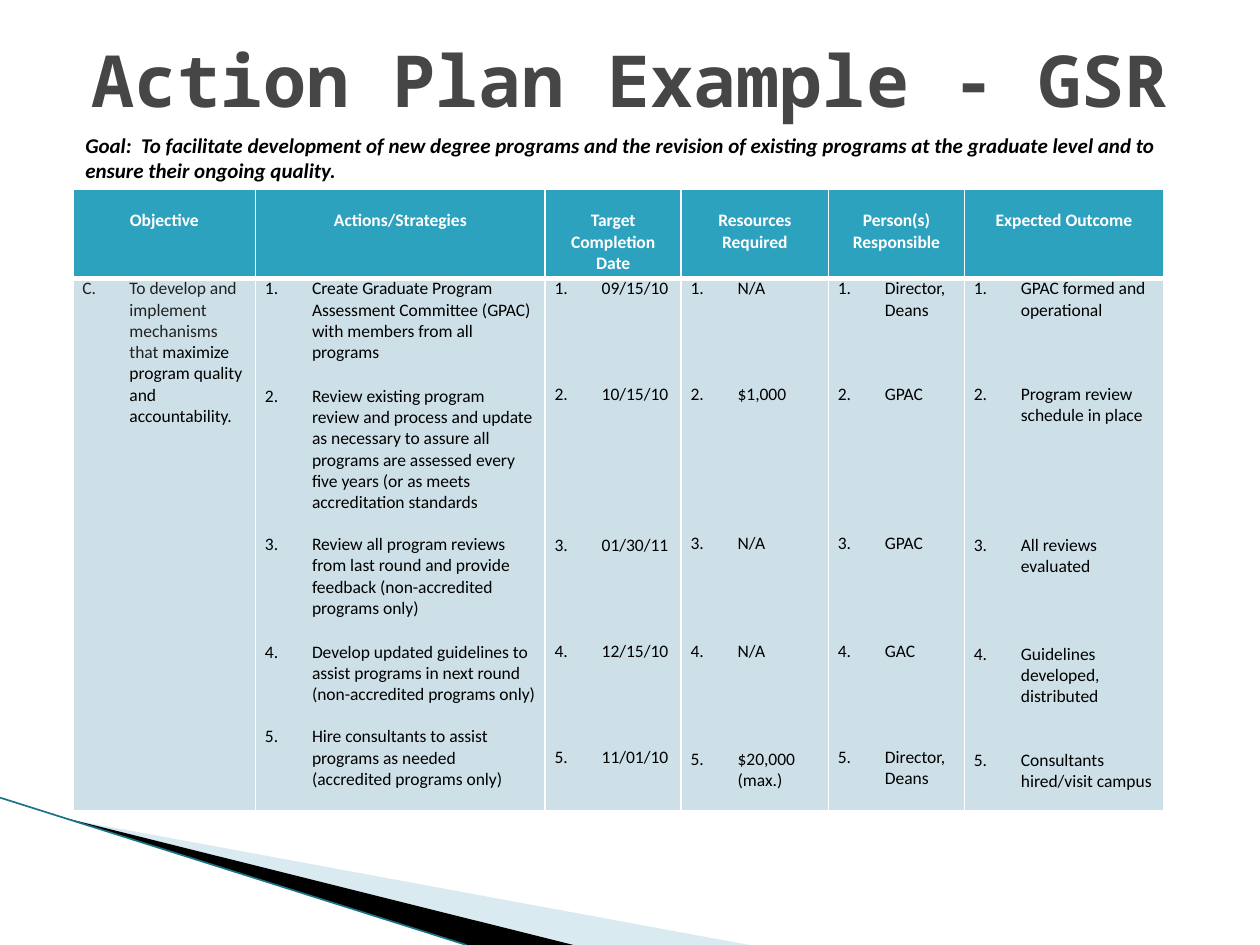
from lxml.etree import SubElement
from pptx import Presentation
from pptx.dml.color import RGBColor
from pptx.enum.text import MSO_ANCHOR as Anchor, MSO_AUTO_SIZE as AutoSize, PP_ALIGN as Align
from pptx.oxml.ns import qn
from pptx.util import Cm, Pt

WHITE, BLACK, GREY = "FFFFFF", "000000", "222222"
HEAD_FILL, BODY_FILL = "2DA2BF", "CDE0E8"

# Header lines, column width (cm) and list items: (space before in pt, text)
COLUMNS = [
    (["Objective"], 3.68, []),
    (["Actions/Strategies"], 5.84, [
        (0, "Create Graduate Program Assessment Committee (GPAC) with members from all programs"),
        (12.9, "Review existing program review and process and update as necessary to assure all "
               "programs are assessed every five years (or as meets accreditation standards"),
        (12, "Review all program reviews from last round and provide feedback "
             "(non-accredited programs only)"),
        (12.9, "Develop updated guidelines to assist programs in next round "
               "(non-accredited programs only)"),
        (12, "Hire consultants to assist programs as needed (accredited programs only)")]),
    (["Target", "Completion", "Date"], 2.74, [
        (0, "09/15/10"), (48.4, "10/15/10"), (74, "01/30/11"),
        (48.4, "12/15/10"), (48.4, "11/01/10")]),
    (["Resources Required"], 2.97, [
        (0, "N/A"), (48.4, "$1,000"), (73, "N/A"), (49.4, "N/A"), (49.4, "$20,000 (max.)")]),
    (["Person(s) Responsible"], 2.74, [
        (0, "Director, Deans"), (36.2, "GPAC"), (73, "GPAC"),
        (49.4, "GAC"), (48.4, "Director, Deans")]),
    (["Expected Outcome"], 4.01, [
        (0, "GPAC formed and operational"), (36.2, "Program review schedule in place"),
        (62, "All reviews evaluated"), (37.9, "Guidelines developed, distributed"),
        (24, "Consultants hired/visit campus")]),
]


def rgb(value):
    return RGBColor.from_string(value)


def add_run(p, text, size, color, bold=False, italic=False, font="Calibri"):
    r = p.add_run()
    r.text = text
    r.font.name, r.font.size = font, Pt(size)
    r.font.bold, r.font.italic = bold, italic
    r.font.color.rgb = rgb(color)


def number(p, scheme, start):
    pPr = p._p.get_or_add_pPr()
    pPr.set("marL", str(Cm(0.95)))
    pPr.set("indent", str(-Cm(0.95)))
    SubElement(pPr, qn("a:buFont"), typeface="+mj-lt")
    SubElement(pPr, qn("a:buAutoNum"), type=scheme, startAt=str(start))


def next_paragraph(tf, i):
    return tf.add_paragraph() if i else tf.paragraphs[0]


def style_cell(cell, fill, top_margin=0, bottom_line=1, top_line=1):
    cell.margin_left = cell.margin_right = Cm(0.19)
    cell.margin_top, cell.margin_bottom = Cm(top_margin), 0
    tcPr = cell._tc.get_or_add_tcPr()
    for side, width in zip("LRTB", (1, 1, top_line, bottom_line)):
        ln = SubElement(tcPr, qn(f"a:ln{side}"), w=str(Pt(width)))
        SubElement(SubElement(ln, qn("a:solidFill")), qn("a:srgbClr"), val=WHITE)
    cell.fill.solid()
    cell.fill.fore_color.rgb = rgb(fill)


def add_wedge(slide, left, top, points, color, alpha=100):
    xy = [(Cm(left + x), Cm(top + y)) for x, y in points]
    builder = slide.shapes.build_freeform(*xy[0])
    builder.add_line_segments(xy[1:], close=True)
    sp = builder.convert_to_shape()
    sp.shadow.inherit = False
    sp.line.fill.background()
    sp.fill.solid()
    sp.fill.fore_color.rgb = rgb(color)
    if alpha < 100:
        clr = sp._element.spPr.find(".//" + qn("a:srgbClr"))
        SubElement(clr, qn("a:alpha"), val=str(alpha * 1000))


def add_corner(slide, left, top, width, height):
    """Sweeping wedges and edge line in the lower left corner."""
    add_wedge(slide, left, top, [(1.4, 0.44), (width, height), (11.58, height)], "A0CBDC", 40)
    add_wedge(slide, left, top, [(1.35, 0.42), (11.56, height), (9.42, height)], BLACK)
    line = slide.shapes.add_connector(1, Cm(left), Cm(top), Cm(left + 9.4), Cm(top + height))
    line.line.width = Pt(0.95)
    line.line.color.rgb = rgb("1A7488")
    SubElement(line._element.spPr, qn("a:effectLst"))


def set_title(slide, left, top, width, height):
    sp = slide.shapes.title
    sp.left, sp.top, sp.width, sp.height = Cm(left), Cm(top), Cm(width), Cm(height)
    tf = sp.text_frame
    tf.auto_size = AutoSize.NONE
    tf.vertical_anchor = Anchor.MIDDLE
    p = tf.paragraphs[0]
    p.alignment = Align.CENTER
    add_run(p, "Action Plan Example - GSR", 41, "464646", bold=True, font="Noto Sans Mono")


def add_plan(slide, left, top, head_height, body_height):
    width = sum(col[1] for col in COLUMNS)
    frame = slide.shapes.add_table(2, len(COLUMNS), Cm(left), Cm(top), Cm(width),
                                   Cm(head_height + body_height))
    table = frame.table
    table.rows[0].height, table.rows[1].height = Cm(head_height), Cm(body_height)
    for c, (heading, col_width, items) in enumerate(COLUMNS):
        table.columns[c].width = Cm(col_width)
        head, body = table.cell(0, c), table.cell(1, c)
        style_cell(head, HEAD_FILL, top_margin=0.43, bottom_line=3)
        style_cell(body, BODY_FILL, top_line=3)
        for i, text in enumerate(heading):
            p = next_paragraph(head.text_frame, i)
            p.alignment = Align.CENTER
            add_run(p, text, 10, WHITE, bold=True)
        for i, (gap, text) in enumerate(items):
            p = next_paragraph(body.text_frame, i)
            number(p, "arabicPeriod", i + 1)
            if gap:
                p.space_before = Pt(gap)
            add_run(p, text, 10, BLACK)
    # Objective, lettered C and in two shades
    p = table.cell(1, 0).text_frame.paragraphs[0]
    number(p, "alphaUcPeriod", 3)
    add_run(p, "To develop and implement mechanisms that ", 10, GREY)
    add_run(p, "maximize program quality and accountability.", 10, BLACK)


def add_goal(slide, left, top, width, height):
    tf = slide.shapes.add_textbox(Cm(left), Cm(top), Cm(width), Cm(height)).text_frame
    tf.word_wrap = True
    add_run(tf.paragraphs[0],
            "Goal:  To facilitate development of new degree programs and the revision of existing "
            "programs at the graduate level and to ensure their ongoing quality.",
            12, BLACK, bold=True, italic=True)


def main():
    prs = Presentation()
    prs.slide_width, prs.slide_height = Cm(25.4), Cm(19.05)
    slide = prs.slides.add_slide(prs.slide_layouts[5])
    add_corner(slide, 0, 16.08, 15.1, 2.97)
    add_plan(slide, 1.47, 3.81, 1.8, 10.74)
    set_title(slide, 1.27, 0, 22.86, 3.18)
    add_goal(slide, 1.47, 2.54, 22.43, 2.06)
    prs.save("out.pptx")


if __name__ == "__main__":
    main()
